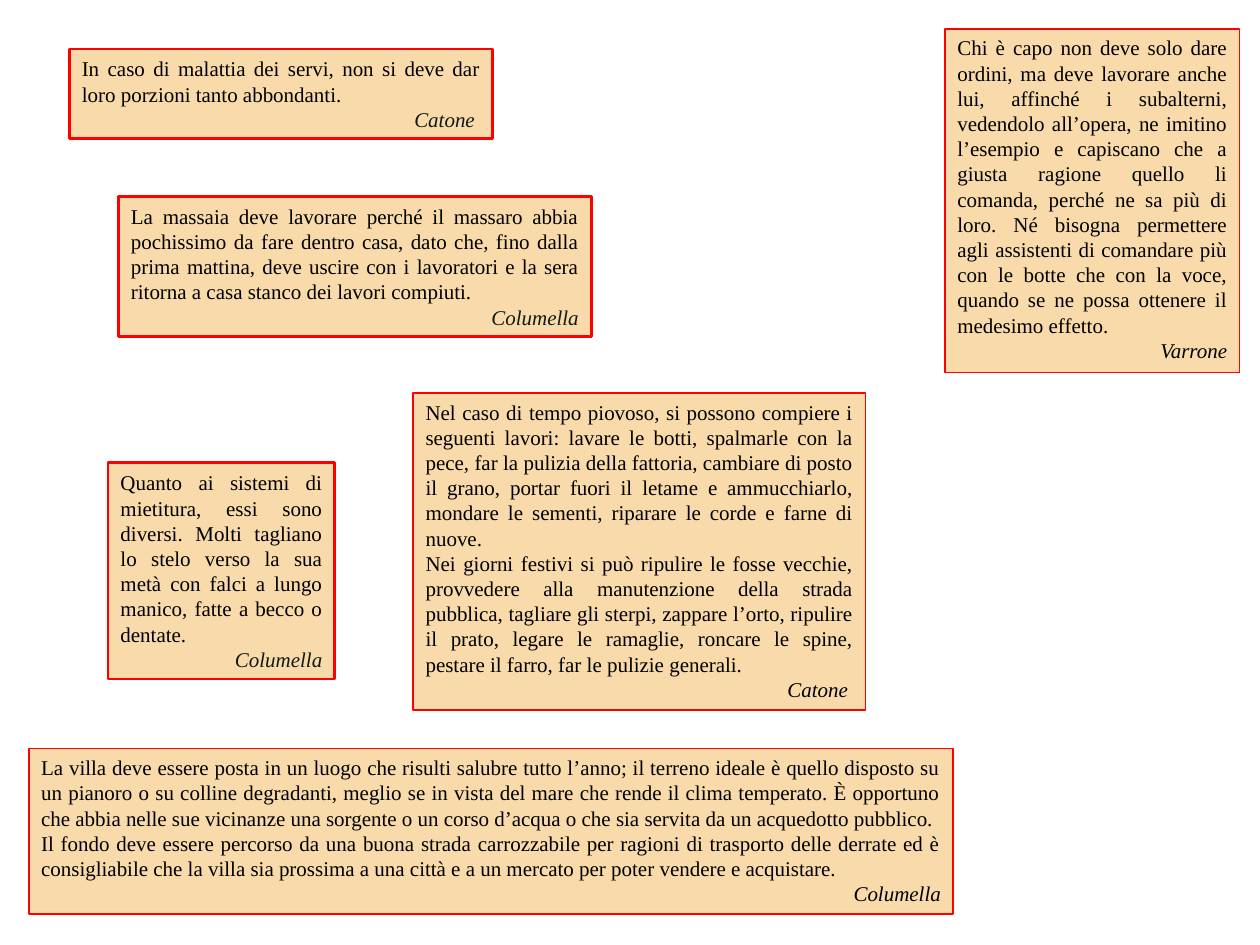
from pptx import Presentation
from pptx.dml.color import RGBColor
from pptx.enum.shapes import MSO_SHAPE
from pptx.enum.text import MSO_ANCHOR, MSO_AUTO_SIZE, PP_ALIGN
from pptx.util import Cm, Pt

SAND = RGBColor(0xF9, 0xDA, 0xAB)
RED = RGBColor(0xFF, 0x00, 0x00)
BLACK = RGBColor(0x00, 0x00, 0x00)
DARK_GREEN = RGBColor(0x11, 0x1A, 0x10)

THIN = dict(border=1, anchor=MSO_ANCHOR.TOP, author_color=BLACK)
THICK = dict(border=1.5, anchor=MSO_ANCHOR.MIDDLE, author_color=DARK_GREEN)

QUOTES = [
    ((0.58, 15.09, 18.64, 3.33), THIN, "Columella", [
        "La villa deve essere posta in un luogo che risulti salubre tutto l’anno; "
        "il terreno ideale è quello disposto su un pianoro o su colline degradanti, "
        "meglio se in vista del mare che rende il clima temperato. È opportuno che "
        "abbia nelle sue vicinanze una sorgente o un corso d’acqua o che sia servita "
        "da un acquedotto pubblico.",
        "Il fondo deve essere percorso da una buona strada carrozzabile per ragioni "
        "di trasporto delle derrate ed è consigliabile che la villa sia prossima a "
        "una città e a un mercato per poter vendere e acquistare."]),
    ((19.05, 0.58, 5.94, 6.93), THIN, "Varrone", [
        "Chi è capo non deve solo dare ordini, ma deve lavorare anche lui, affinché "
        "i subalterni, vedendolo all’opera, ne imitino l’esempio e capiscano che a "
        "giusta ragione quello li comanda, perché ne sa più di loro. Né bisogna "
        "permettere agli assistenti di comandare più con le botte che con la voce, "
        "quando se ne possa ottenere il medesimo effetto."]),
    ((2.39, 3.96, 9.53, 2.82), THICK, "Columella", [
        "La massaia deve lavorare perché il massaro abbia pochissimo da fare dentro "
        "casa, dato che, fino dalla prima mattina, deve uscire con i lavoratori e la "
        "sera ritorna a casa stanco dei lavori compiuti."]),
    ((1.4, 0.99, 8.53, 1.8), THICK, "Catone ", [
        "In caso di malattia dei servi, non si deve dar loro porzioni tanto "
        "abbondanti."]),
    ((2.18, 9.32, 4.57, 4.37), THICK, "Columella", [
        "Quanto ai sistemi di mietitura, essi sono diversi. Molti tagliano lo stelo "
        "verso la sua metà con falci a lungo manico, fatte a becco o dentate."]),
    ((8.33, 7.92, 9.12, 6.4), THIN, "Catone ", [
        "Nel caso di tempo piovoso, si possono compiere i seguenti lavori: lavare le "
        "botti, spalmarle con la pece, far la pulizia della fattoria, cambiare di "
        "posto il grano, portar fuori il letame e ammucchiarlo, mondare le sementi, "
        "riparare le corde e farne di nuove.",
        "Nei giorni festivi si può ripulire le fosse vecchie, provvedere alla "
        "manutenzione della strada pubblica, tagliare gli sterpi, zappare l’orto, "
        "ripulire il prato, legare le ramaglie, roncare le spine, pestare il farro, "
        "far le pulizie generali."]),
]


def write_paragraph(p, text, align=PP_ALIGN.JUSTIFY, color=BLACK, italic=False):
    p.alignment = align
    r = p.add_run()
    r.text = text
    r.font.name = "Times New Roman"
    r.font.size = Pt(12)
    r.font.italic = italic
    r.font.color.rgb = color


def add_quote(slide, box, author, paragraphs, border, anchor, author_color):
    sp = slide.shapes.add_shape(MSO_SHAPE.RECTANGLE, *map(Cm, box))
    sp.shadow.inherit = False
    sp.fill.solid()
    sp.fill.fore_color.rgb = SAND
    sp.line.color.rgb = RED
    sp.line.width = Pt(border)
    tf = sp.text_frame
    tf.word_wrap = True
    tf.auto_size = MSO_AUTO_SIZE.SHAPE_TO_FIT_TEXT
    tf.vertical_anchor = anchor
    p = tf.paragraphs[0]
    for text in paragraphs:
        write_paragraph(p, text)
        p = tf.add_paragraph()
    write_paragraph(p, author, align=PP_ALIGN.RIGHT, color=author_color, italic=True)


def main():
    prs = Presentation()
    prs.slide_width, prs.slide_height = Cm(25.4), Cm(19.05)
    slide = prs.slides.add_slide(prs.slide_layouts[6])
    for box, style, author, paragraphs in QUOTES:
        add_quote(slide, box, author, paragraphs, **style)
    prs.save("out.pptx")


if __name__ == "__main__":
    main()
